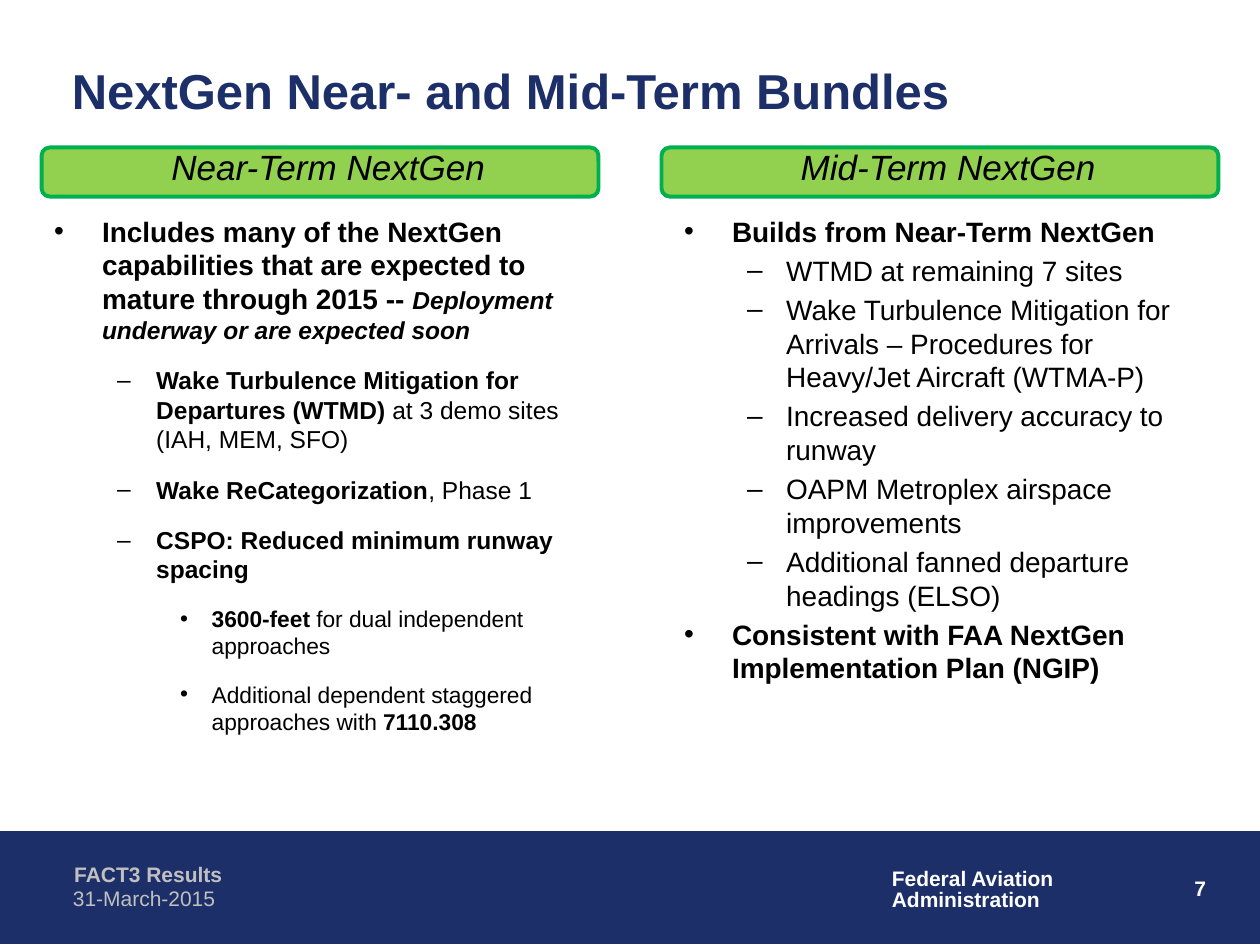
from lxml import etree
from pptx import Presentation
from pptx.dml.color import RGBColor
from pptx.enum.shapes import MSO_SHAPE
from pptx.enum.text import MSO_ANCHOR, MSO_AUTO_SIZE, PP_ALIGN
from pptx.oxml.ns import qn
from pptx.util import Inches, Pt

RECT, ROUND = MSO_SHAPE.RECTANGLE, MSO_SHAPE.ROUNDED_RECTANGLE
TOP, MIDDLE = MSO_ANCHOR.TOP, MSO_ANCHOR.MIDDLE
LEFT, CENTER, RIGHT = PP_ALIGN.LEFT, PP_ALIGN.CENTER, PP_ALIGN.RIGHT
NO_FIT = MSO_AUTO_SIZE.NONE

NAVY = RGBColor(0x1D, 0x2F, 0x68)
WHITE = RGBColor(0xFF, 0xFF, 0xFF)
BLACK = RGBColor(0x00, 0x00, 0x00)
SILVER = RGBColor(0xC0, 0xC0, 0xC0)
LIME = RGBColor(0x92, 0xD0, 0x50)
GREEN = RGBColor(0x00, 0xB0, 0x50)

WIDTH, HEIGHT = Inches(10), Inches(7.5)
COL, ROW = WIDTH / 100, HEIGHT / 75
LEVELS = [(0.38, -0.38, "•"), (0.81, -0.31, "–"), (1.25, -0.25, "•")]

NEAR_TERM = [
    (0, [("Includes many of the NextGen capabilities that are expected to "
          "mature through 2015 -- ", dict(size=16, bold=True)),
         ("Deployment underway or are expected soon",
          dict(size=14, bold=True, italic=True))]),
    (1, [("Wake Turbulence Mitigation for Departures (WTMD) ",
          dict(size=14, bold=True)),
         ("at 3 demo sites (IAH, MEM, SFO)", dict(size=14))]),
    (1, [("Wake ReCategorization", dict(size=14, bold=True)),
         (", Phase 1", dict(size=14))]),
    (1, [("CSPO: Reduced minimum runway spacing",
          dict(size=14, bold=True))]),
    (2, [("3600-feet ", dict(size=13, bold=True)),
         ("for dual independent approaches", dict(size=13))]),
    (2, [("Additional dependent staggered approaches with ", dict(size=13)),
         ("7110.308", dict(size=13, bold=True))]),
]
MID_TERM = [
    (level, [(text, dict(size=16, bold=level == 0))])
    for level, text in [
        (0, "Builds from Near-Term NextGen"),
        (1, "WTMD at remaining 7 sites"),
        (1, "Wake Turbulence Mitigation for Arrivals – Procedures for "
            "Heavy/Jet Aircraft (WTMA-P)"),
        (1, "Increased delivery accuracy to runway"),
        (1, "OAPM Metroplex airspace improvements"),
        (1, "Additional fanned departure headings (ELSO)"),
        (0, "Consistent with FAA NextGen Implementation Plan (NGIP)"),
    ]
]


def grid(x, y, w, h):
    """Turn columns and rows into slide lengths."""
    return round(x * COL), round(y * ROW), round(w * COL), round(h * ROW)


def place(sp, box):
    """Move a placeholder to a grid box."""
    sp.left, sp.top, sp.width, sp.height = grid(*box)


def add_run(p, text, size=12, color=BLACK, bold=False, italic=False):
    """Add a formatted run to a paragraph."""
    r = p.add_run()
    r.text = text
    f = r.font
    f.name, f.size, f.bold, f.italic = "Arial", Pt(size), bold, italic
    f.color.rgb = color


def add_panel(s, kind, box, fill, line, weight):
    """Add a filled and outlined shape."""
    sp = s.shapes.add_shape(kind, *grid(*box))
    sp.shadow.inherit = False
    sp.fill.solid()
    sp.fill.fore_color.rgb = fill
    sp.line.color.rgb = line
    sp.line.width = Pt(weight)
    return sp


def add_label(s, box, lines, align=LEFT, spacing=1.0, wrap=True, **fmt):
    """Add a text box with one paragraph for each line."""
    tf = s.shapes.add_textbox(*grid(*box)).text_frame
    tf.word_wrap = wrap
    for i, line in enumerate(lines):
        p = tf.add_paragraph() if i else tf.paragraphs[0]
        p.alignment, p.line_spacing = align, spacing
        add_run(p, line, **fmt)


def indent(p, level, margin, first=0):
    """Set the level, left margin and first-line indent of a paragraph."""
    p.level = level
    pPr = p._p.get_or_add_pPr()
    pPr.set("marL", str(Inches(margin)))
    pPr.set("indent", str(Inches(first)))
    return pPr


def add_title(sp, box, text):
    """Fill the title placeholder."""
    place(sp, box)
    tf = sp.text_frame
    tf.vertical_anchor, tf.auto_size = MIDDLE, NO_FIT
    p = tf.paragraphs[0]
    p.alignment = LEFT
    add_run(p, text, size=28, color=NAVY, bold=True)


def add_bullets(sp, box, items, before=0, after=0):
    """Fill a body placeholder with a bulleted list."""
    place(sp, box)
    tf = sp.text_frame
    tf.auto_size, tf.vertical_anchor = NO_FIT, TOP
    for i, (level, runs) in enumerate(items):
        p = tf.add_paragraph() if i else tf.paragraphs[0]
        margin, first, char = LEVELS[level]
        pPr = indent(p, level, margin, first)
        etree.SubElement(pPr, qn("a:buChar")).set("char", char)
        p.space_before, p.space_after = Pt(before if i else 0), Pt(after)
        for text, fmt in runs:
            add_run(p, text, **fmt)


def add_bundle(s, body, box, heading, items, shift=0, **spacing):
    """Place a heading bar and the list below it."""
    x, y, w, h = box
    add_bullets(body, (x + shift, y + 4.8, w - 1, h - 4.8), items, **spacing)
    sp = add_panel(s, ROUND, (x, y, w, 3.9), LIME, GREEN, 2.25)
    tf = sp.text_frame
    tf.vertical_anchor, tf.word_wrap = TOP, True
    p = tf.paragraphs[0]
    indent(p, 1, 0.13)
    p.alignment, p.line_spacing = CENTER, Pt(18)
    add_run(p, heading, size=20, italic=True)


def add_footer(s, box):
    """Place the footer band and its labels."""
    x, y, w, h = box
    add_panel(s, RECT, box, NAVY, NAVY, 0.75)
    add_label(s, (x + 75.9, y + 3, 20.8, 5), ["7"], align=RIGHT,
              color=WHITE, bold=True)
    add_label(s, (x + 69.8, y + 2.5, 15, 4.4),
              ["Federal Aviation", "Administration"], spacing=0.85,
              wrap=False, color=WHITE, bold=True)
    add_label(s, (x + 4.9, y + 1.9, 52.3, 3), ["FACT3 Results"],
              color=SILVER, bold=True)
    add_label(s, (x + 4.8, y + 3.8, 40.9, 3), ["31-March-2015"], color=SILVER)


def main():
    """Build and save the slide."""
    prs = Presentation()
    prs.slide_width, prs.slide_height = WIDTH, HEIGHT
    s = prs.slides.add_slide(prs.slide_layouts[3])
    title, near, mid = s.placeholders
    add_footer(s, (0, 66, 100, 8.9))
    add_title(title, (4.7, 3.8, 92.7, 6.7), "NextGen Near- and Mid-Term Bundles")
    add_bundle(s, near, (3.3, 11.7, 44.2, 52.8), "Near-Term NextGen",
               NEAR_TERM, after=12)
    add_bundle(s, mid, (52.5, 11.7, 44.2, 52.8), "Mid-Term NextGen",
               MID_TERM, shift=0.8, before=3.2)
    prs.save("out.pptx")


if __name__ == "__main__":
    main()
